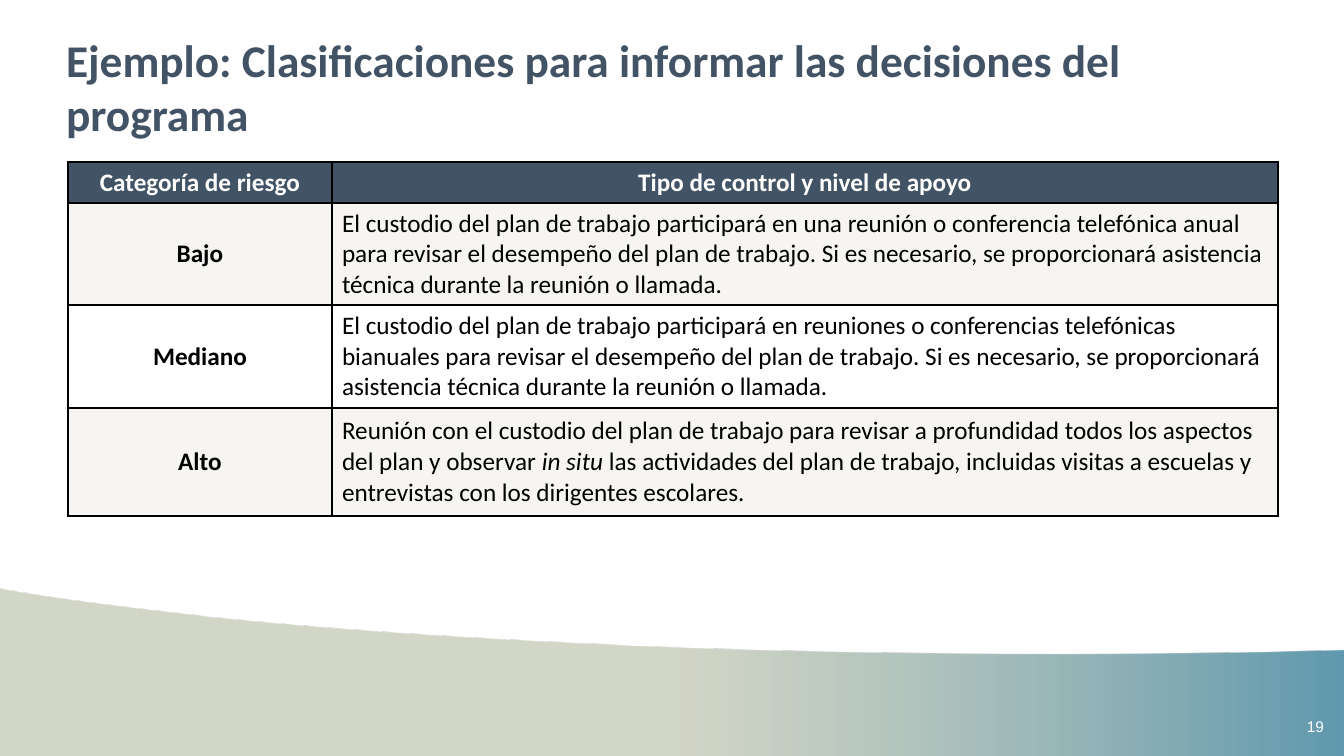
from dataclasses import dataclass

from lxml.etree import SubElement
from pptx import Presentation
from pptx.dml.color import RGBColor
from pptx.enum.text import MSO_ANCHOR, MSO_AUTO_SIZE, PP_ALIGN
from pptx.oxml import parse_xml
from pptx.oxml.ns import nsdecls, qn
from pptx.util import Pt

SCALE = 914400 / 100.8


@dataclass(frozen=True)
class Theme:
    navy: str = "415364"
    sage: str = "B7BDA4"
    teal: str = "5F99AF"
    sand: str = "A79F88"
    white: str = "FFFFFF"
    black: str = "000000"
    font: str = "Calibri"
    small: str = "Arial"
    title: float = 32.4
    body: int = 18
    number: int = 11


THEME = Theme()
TITLE = "Ejemplo: Clasificaciones para informar las decisiones del programa"
HEADS = ["Categoría de riesgo", "Tipo de control y nivel de apoyo"]
LEVELS = [
    ("Bajo", ["El custodio del plan de trabajo participará en una reunión o conferencia "
              "telefónica anual para revisar el desempeño del plan de trabajo. Si es necesario, "
              "se proporcionará asistencia técnica durante la reunión o llamada."]),
    ("Mediano", ["El custodio del plan de trabajo participará en reuniones o conferencias "
                 "telefónicas bianuales para revisar el desempeño del plan de trabajo. Si es "
                 "necesario, se proporcionará asistencia técnica durante la reunión o llamada."]),
    ("Alto", ["Reunión con el custodio del plan de trabajo para revisar a profundidad todos "
              "los aspectos del plan y observar ", "in situ ",
              "las actividades del plan de trabajo, incluidas visitas a escuelas y "
              "entrevistas con los dirigentes escolares."]),
]
ITALIC = {"in situ "}


def px(value):
    return round(value * SCALE)


def write(frame, runs, size=THEME.body, color=THEME.black, font=THEME.font,
          bold=False, align=PP_ALIGN.LEFT):
    line = frame.paragraphs[0]
    line.alignment = align
    for text in runs:
        run = line.add_run()
        run.text = text
        run.font.size = Pt(size)
        run.font.name = font
        run.font.bold = bold
        run.font.italic = text in ITALIC
        run.font.color.rgb = RGBColor.from_string(color)


def fade(node, percent):
    color = next(node.iter(qn("a:srgbClr")))
    SubElement(color, qn("a:alpha")).set("val", str(percent * 1000))


def curve(points, steps=24):
    for step in range(1, steps + 1):
        t = step / steps
        weights = ((1 - t) ** 3, 3 * t * (1 - t) ** 2, 3 * t * t * (1 - t), t ** 3)
        yield tuple(px(sum(w * p[axis] for w, p in zip(weights, points)))
                    for axis in (0, 1))


def add_wave(slide, left, top, width, height):
    knots = [(0, 0), (61, 11), (134, 20), (218, 29), (435, 51), (731, 65),
             (1049, 65), (1151, 65), (1245, 64), (width, 61)]
    knots = [(left + x, top + y) for x, y in knots]
    edge = [spot for i in range(0, 9, 3) for spot in curve(knots[i:i + 4])]
    base = px(top + height)
    pen = slide.shapes.build_freeform(px(left), px(top))
    pen.add_line_segments(edge + [(px(left + width), base), (px(left), base)])
    wave = pen.convert_to_shape()
    wave.shadow.inherit = False
    wave.line.fill.background()
    wave.fill.gradient()
    wave.fill.gradient_angle = 0
    stops = wave.fill.gradient_stops
    for stop, color, place in zip(stops, (THEME.sage, THEME.teal), (0.5, 1)):
        stop.color.rgb = RGBColor.from_string(color)
        stop.position = place
    fade(wave.fill._xPr, 61)


def add_number(slide, left, top, width, height):
    box = slide.shapes.add_textbox(px(left), px(top), px(width), px(height))
    box.text_frame.word_wrap = False
    write(box.text_frame, ["19"], size=THEME.number, color=THEME.white, font=THEME.small)


def set_title(slide, left, top, width, height):
    title = slide.shapes.title
    title.left, title.top = px(left), px(top)
    title.width, title.height = px(width), px(height)
    frame = title.text_frame
    frame.auto_size = MSO_AUTO_SIZE.NONE
    frame.vertical_anchor = MSO_ANCHOR.TOP
    write(frame, [TITLE], size=THEME.title, color=THEME.navy, bold=True)


def rule(cell):
    props = cell._tc.get_or_add_tcPr()
    for place, side in enumerate("LRTB"):
        props.insert(place, parse_xml(
            f'<a:ln{side} {nsdecls("a")} w="12700"><a:solidFill>'
            f'<a:srgbClr val="{THEME.black}"/></a:solidFill></a:ln{side}>'))


def paint(cell, color, percent=100):
    cell.fill.solid()
    cell.fill.fore_color.rgb = RGBColor.from_string(color)
    if percent < 100:
        fade(cell._tc.tcPr.find(qn("a:solidFill")), percent)


def add_levels(slide, left, top, width, height):
    heights = [41, 102, 103]
    heights.append(height - sum(heights))
    first = 264
    grid = slide.shapes.add_table(len(heights), 2, px(left), px(top),
                                  px(width), px(height)).table
    grid.horz_banding = False
    for column, size in zip(grid.columns, (first, width - first)):
        column.width = px(size)
    for row, size in zip(grid.rows, heights):
        row.height = px(size)
    rows = [(HEADS[0], [HEADS[1]])] + LEVELS
    for r, (name, text) in enumerate(rows):
        for c, runs in enumerate(([name], text)):
            cell = grid.cell(r, c)
            cell.vertical_anchor = MSO_ANCHOR.MIDDLE
            head = r == 0
            label = head or c == 0
            write(cell.text_frame, runs, bold=label,
                  color=THEME.white if head else THEME.black,
                  align=PP_ALIGN.CENTER if label else PP_ALIGN.LEFT)
            if head:
                paint(cell, THEME.navy)
            elif r % 2:
                paint(cell, THEME.sand, 10)
            else:
                cell.fill.background()
            rule(cell)


def main():
    deck = Presentation()
    deck.slide_width, deck.slide_height = px(1344), px(756)
    slide = deck.slides.add_slide(deck.slide_layouts[5])
    add_wave(slide, 0, 589, 1344, 167)
    add_number(slide, 1297, 712, 39, 29)
    set_title(slide, 56, 27, 1210, 84)
    add_levels(slide, 68, 162, 1210, 354)
    deck.save("out.pptx")


if __name__ == "__main__":
    main()
